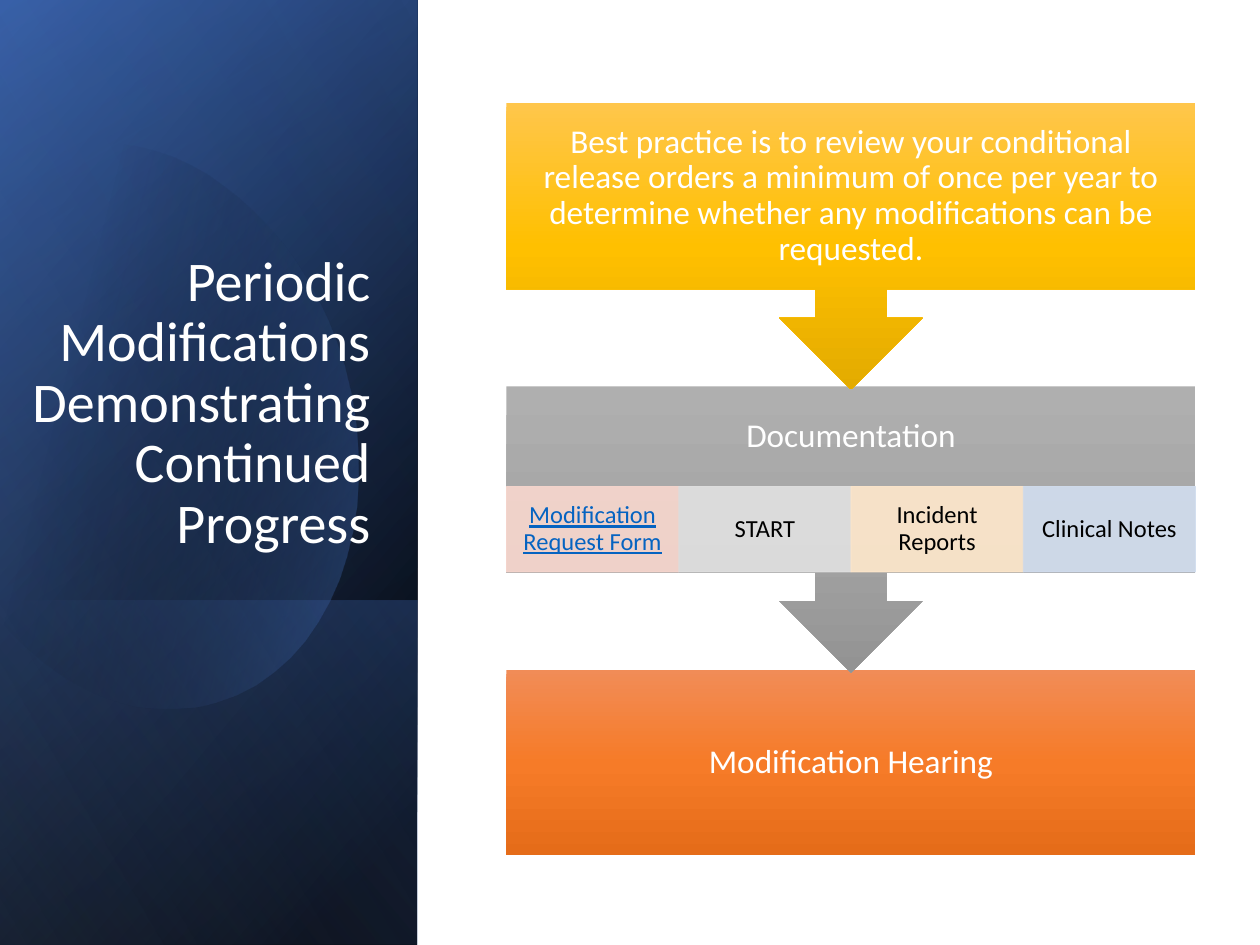
from lxml import etree
from pptx import Presentation
from pptx.dml.color import RGBColor as RGB
from pptx.enum.shapes import MSO_SHAPE as Kind
from pptx.enum.text import MSO_ANCHOR as Anchor, PP_ALIGN as Align
from pptx.oxml.ns import qn
from pptx.util import Cm, Pt

WHITE = RGB(0xFF, 0xFF, 0xFF)
BLACK = RGB(0, 0, 0)
NAVY = RGB(0x2F, 0x55, 0x97)
BLUE = RGB(0x44, 0x72, 0xC4)
PALE = RGB(0x8F, 0xAA, 0xDC)
LINK = RGB(0x05, 0x63, 0xC1)
GOLD = [RGB(0xFF, 0xC6, 0x4B), RGB(0xFF, 0xC0, 0x00), RGB(0xE3, 0xAB, 0x00)]
GREY = [RGB(0xAF, 0xAF, 0xAF), RGB(0xA5, 0xA5, 0xA5), RGB(0x93, 0x93, 0x93)]
ORANGE = [RGB(0xF1, 0x8C, 0x57), RGB(0xF6, 0x7B, 0x28), RGB(0xE5, 0x6C, 0x19)]
ROSE = RGB(0xF8, 0xD7, 0xCE)
SILVER = RGB(0xE1, 0xE1, 0xE1)
CREAM = RGB(0xFF, 0xE8, 0xCC)
SKY = RGB(0xD2, 0xDE, 0xEF)

# Panel layers: top and height as shares of the panel, angle, then
# gradient stops of (position %, colour, opacity %)
LAYERS = [
    (0, 1, 220, [(8, BLACK, 100), (100, NAVY, 100)]),
    (0, 1, 240, [(0, BLACK, 0), (99, BLUE, 46)]),
    (0.635, 0.365, 140, [(2, BLUE, 29), (100, BLACK, 30)]),
]
GLOW = (0, 1, 150, [(0, BLACK, 0), (99, PALE, 11)])

# Oval outline in hundredths of a centimetre: 2 numbers a line, 6 a curve
START = (244, 290)
OVAL = [
    (434, 310, 620, 488, 693, 737),
    (780, 1046, 665, 1349, 434, 1415),
    (290, 1458, 135, 1397, 18, 1270),
    (-8, 1240),
    (-64, 422),
    (-38, 391),
    (5, 348, 56, 318, 114, 300),
    (157, 287, 201, 284, 244, 290),
]

CELLS = [
    ("Modification Request Form", ROSE, LINK),
    ("START", SILVER, BLACK),
    ("Incident Reports", CREAM, BLACK),
    ("Clinical Notes", SKY, BLACK),
]


def shade(shape, stops, angle):
    """Fill with a linear gradient, without line or shadow."""
    grad = etree.SubElement(shape._element.spPr, qn("a:gradFill"), rotWithShape="1")
    row = etree.SubElement(grad, qn("a:gsLst"))
    for pos, color, alpha in stops:
        stop = etree.SubElement(row, qn("a:gs"), pos=str(pos * 1000))
        tint = etree.SubElement(stop, qn("a:srgbClr"), val=str(color))
        if alpha < 100:
            etree.SubElement(tint, qn("a:alpha"), val=str(alpha * 1000))
    etree.SubElement(grad, qn("a:lin"), ang=str(angle * 60000), scaled="0")
    shape.line.fill.background()
    shape.shadow.inherit = False


def write(shape, text, size, color, pad, align=Align.CENTER, anchor=Anchor.MIDDLE):
    """Set the text; pad is the side and the top/bottom inset in cm."""
    frame = shape.text_frame
    frame.word_wrap = True
    frame.vertical_anchor = anchor
    frame.margin_left = frame.margin_right = Cm(pad[0])
    frame.margin_top = frame.margin_bottom = Cm(pad[1])
    para = frame.paragraphs[0]
    para.text = text
    para.alignment = align
    para.line_spacing = 0.9
    para.font.name = "Calibri"
    para.font.size = Pt(size)
    para.font.color.rgb = color
    return para


def curve(start, ctrl, steps=16):
    """Points along a cubic Bezier curve, after its start."""
    knots = [start, ctrl[:2], ctrl[2:4], ctrl[4:]]
    for i in range(1, steps + 1):
        t = i / steps
        u = 1 - t
        parts = (u**3, 3 * u * u * t, 3 * u * t * t, t**3)
        yield tuple(sum(w * k[axis] for w, k in zip(parts, knots)) for axis in (0, 1))


def add_oval(shapes):
    pen = START
    points = []
    for seg in OVAL:
        points += curve(pen, seg) if len(seg) == 6 else [seg]
        pen = seg[-2:]
    path = shapes.build_freeform(*START, scale=Cm(0.01))
    path.add_line_segments(points, close=True)
    shade(path.convert_to_shape(), [(29, BLACK, 0), (100, BLUE, 43)], 14)


def add_layer(shapes, x, y, w, h, layer):
    top, part, angle, stops = layer
    rect = shapes.add_shape(Kind.RECTANGLE, Cm(x), Cm(y + top * h), Cm(w), Cm(part * h))
    shade(rect, stops, angle)


def add_panel(shapes, x, y, w, h):
    for layer in LAYERS:
        add_layer(shapes, x, y, w, h, layer)
    add_oval(shapes)
    add_layer(shapes, x, y, w, h, GLOW)
    title = shapes.add_textbox(Cm(x), Cm(y + 4.67), Cm(w - 0.69), Cm(6.66))
    write(title, "Periodic Modifications Demonstrating Continued Progress",
          32, WHITE, (0.25, 0.13), Align.RIGHT, Anchor.BOTTOM)


def add_stage(shapes, kind, x, y, w, h, text, colors):
    stage = shapes.add_shape(kind, Cm(x), Cm(y), Cm(w), Cm(h))
    shade(stage, [(i * 50, color, 100) for i, color in enumerate(colors)], 90)
    write(stage, text, 19, WHITE, (0.38, 0.38))
    return stage


def add_cells(shapes, x, y, w, h):
    wide = w / len(CELLS)
    for i, (text, color, ink) in enumerate(CELLS):
        cell = shapes.add_shape(Kind.RECTANGLE, Cm(x + i * wide), Cm(y), Cm(wide), Cm(h))
        cell.shadow.inherit = False
        cell.line.width = Pt(0.5)
        for fill in (cell.fill, cell.line.fill):
            fill.solid()
            fill.fore_color.rgb = color
        for tint in cell._element.spPr.iter(qn("a:srgbClr")):
            etree.SubElement(tint, qn("a:alpha"), val="90000")
        para = write(cell, text, 14, ink, (0.28, 0.05))
        para.font.underline = True if ink == LINK else None


def add_flow(shapes, x, y, w, h):
    body = 3.74
    step = (h - body) / 2
    tall = step + 0.06  # arrow tips reach just into the next stage
    head = 2.02
    add_stage(shapes, Kind.RECTANGLE, x, y + 2 * step, w, body,
              "Modification Hearing", ORANGE)
    papers = add_stage(shapes, Kind.DOWN_ARROW_CALLOUT, x, y + step, w, tall,
                       "Documentation", GREY)
    papers.text_frame.margin_bottom = Cm(0.38 + body - head)
    add_cells(shapes, x, y + step + head, w, body - head)
    add_stage(shapes, Kind.DOWN_ARROW_CALLOUT, x, y, w, tall,
              "Best practice is to review your conditional release orders a minimum "
              "of once per year to determine whether any modifications can be "
              "requested.", GOLD)


def main():
    deck = Presentation()
    deck.slide_width, deck.slide_height = Cm(25.4), Cm(19.05)
    shapes = deck.slides.add_slide(deck.slide_layouts[6]).shapes
    add_panel(shapes, 0, 0, 8.41, 19.05)
    add_flow(shapes, 10.21, 2.08, 13.89, 15.16)
    deck.save("out.pptx")


if __name__ == "__main__":
    main()
